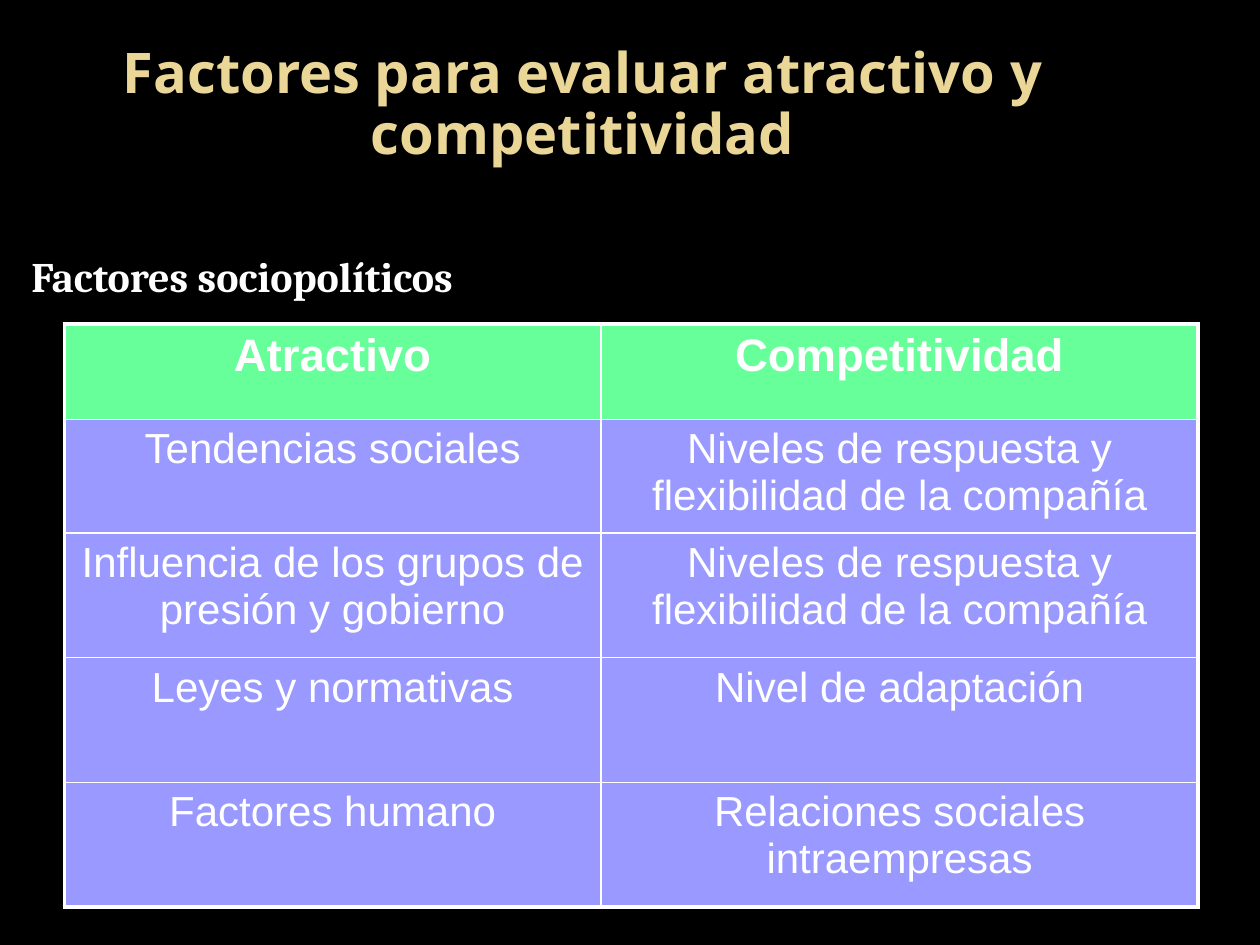
from lxml import etree
from pptx import Presentation
from pptx.dml.color import RGBColor
from pptx.enum.text import MSO_ANCHOR, PP_ALIGN
from pptx.oxml.ns import qn
from pptx.util import Pt

PX = 9144  # 100 px to the inch
CENTER = PP_ALIGN.CENTER
MIDDLE = MSO_ANCHOR.MIDDLE
BLANK = 6

ROWS = [
    ("Atractivo", "Competitividad"),
    ("Tendencias sociales", "Niveles de respuesta y flexibilidad de la compañía"),
    ("Influencia de los grupos de presión y gobierno",
     "Niveles de respuesta y flexibilidad de la compañía"),
    ("Leyes y normativas", "Nivel de adaptación"),
    ("Factores humano", "Relaciones sociales intraempresas"),
]
COL_WIDTHS = [426, 474]
ROW_HEIGHTS = [76, 76, 99, 99, 99]


def add_run(p, text, font, size, color, bold):
    r = p.add_run()
    r.text = text
    r.font.name = font
    r.font.size = Pt(size)
    r.font.bold = bold
    r.font.color.rgb = RGBColor.from_string(color)


def space_before(p, percent):
    """Set the space above as a share of the line, which needs XML."""
    p_pr = p._p.get_or_add_pPr()
    spc = etree.SubElement(p_pr, qn("a:spcBef"))
    etree.SubElement(spc, qn("a:spcPct"), val=str(percent * 1000))


prs = Presentation()
prs.slide_width = 1000 * PX
prs.slide_height = 750 * PX
s = prs.slides.add_slide(prs.slide_layouts[BLANK])
s.background.fill.solid()
s.background.fill.fore_color.rgb = RGBColor.from_string("000000")

# Title
tf = s.shapes.add_textbox(50 * PX, 13 * PX, 825 * PX, 142 * PX).text_frame
tf.word_wrap = True
tf.vertical_anchor = MIDDLE
p = tf.paragraphs[0]
p.alignment = CENTER
p.line_spacing = 0.9
add_run(p, "Factores para evaluar atractivo y competitividad",
        "Noto Sans", 32, "EAD696", True)

# Table
table = s.shapes.add_table(len(ROWS), 2, 51 * PX, 257 * PX,
                           sum(COL_WIDTHS) * PX, sum(ROW_HEIGHTS) * PX).table
for col, width in zip(table.columns, COL_WIDTHS):
    col.width = width * PX
for row, height in zip(table.rows, ROW_HEIGHTS):
    row.height = height * PX

for i, texts in enumerate(ROWS):
    header = i == 0
    for j, text in enumerate(texts):
        cell = table.cell(i, j)
        p = cell.text_frame.paragraphs[0]
        p.alignment = CENTER
        space_before(p, 20)
        add_run(p, text, "Arial", 26 if header else 24, "FFFFFF", header)

        # Thick lines on the outer edge, thin ones inside
        edges = {"L": j == 0, "R": j == 1, "T": header, "B": i == len(ROWS) - 1}
        tc_pr = cell._tc.get_or_add_tcPr()
        for side, outer in edges.items():
            ln = etree.SubElement(tc_pr, qn("a:ln" + side),
                                  w=str(int(Pt(2.25 if outer else 1))))
            fill = etree.SubElement(ln, qn("a:solidFill"))
            etree.SubElement(fill, qn("a:srgbClr"), val="FFFFFF")
        cell.fill.solid()
        cell.fill.fore_color.rgb = RGBColor.from_string("66FF99" if header else "9999FF")

# Subtitle
tf = s.shapes.add_textbox(0, 194 * PX, 900 * PX, 482 * PX).text_frame
tf.word_wrap = True
p = tf.paragraphs[0]
space_before(p, 20)
p_pr = p._p.get_or_add_pPr()
p_pr.set("marL", str(60 * PX))
p_pr.set("indent", str(-45 * PX))
add_run(p, "Factores sociopolíticos", "Cambria", 24, "FFFFFF", True)

prs.save("out.pptx")
